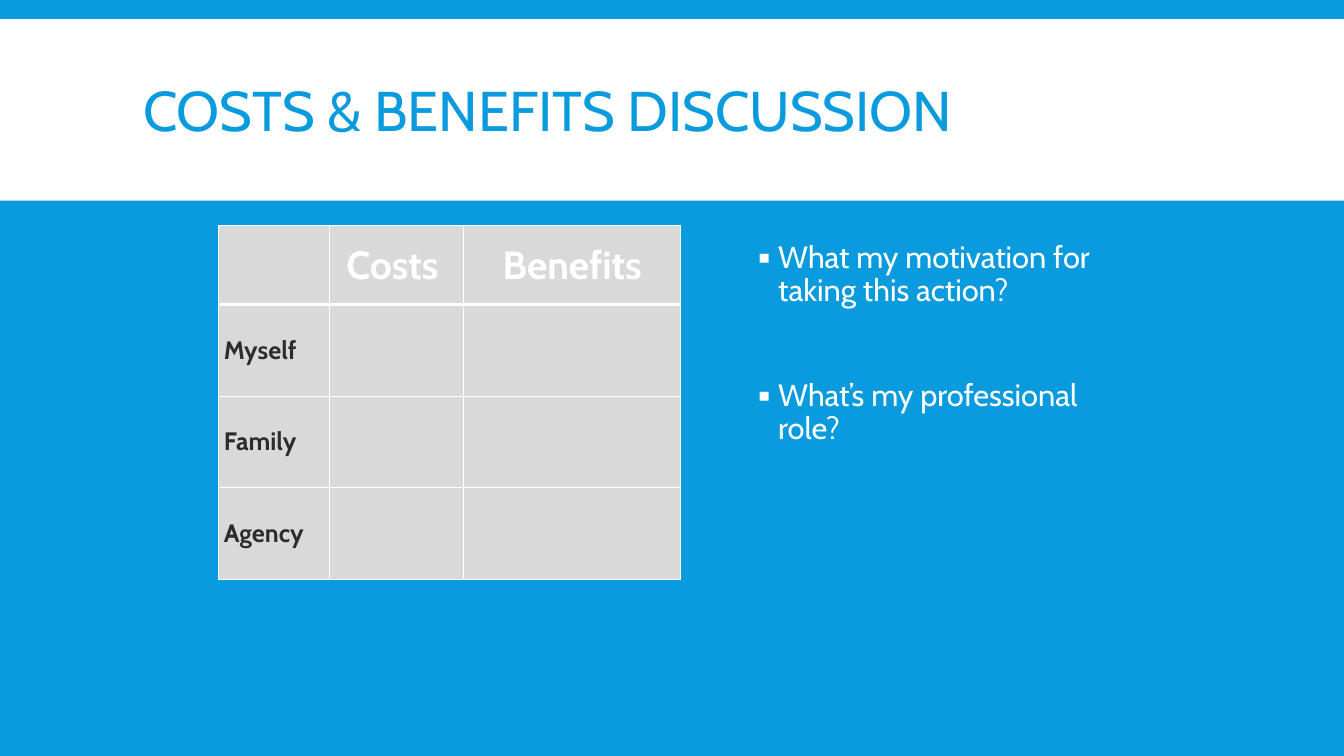
from lxml.etree import SubElement
from pptx import Presentation
from pptx.dml.color import RGBColor
from pptx.enum.shapes import MSO_SHAPE
from pptx.enum.text import MSO_ANCHOR, PP_ALIGN
from pptx.oxml.ns import qn
from pptx.util import Inches, Pt

FONT = "Cabin"
BLUE, WHITE, GREY, DARK = "099BDD", "FFFFFF", "D9D9D9", "2C2C2C"
COLUMN_WIDTHS = [1.1, 1.33, 2.15]
ROW_HEIGHTS = [0.78, 0.91, 0.91, 0.91]
TABLE_ROWS = [
    ["", "Costs ", "Benefits"],
    ["Myself", "", ""],
    ["Family", "", ""],
    ["Agency", "", ""],
]
QUESTIONS = ["What my motivation for taking this action?", "What’s my professional role?"]


def set_fill(fill, color):
    fill.solid()
    fill.fore_color.rgb = RGBColor.from_string(color)


def add_run(paragraph, text, size, color, bold=False):
    run = paragraph.add_run()
    run.text = text
    run.font.name = FONT
    run.font.size = Pt(size)
    run.font.bold = bold
    run.font.color.rgb = RGBColor.from_string(color)


def add_title_band(slide):
    band = slide.shapes.add_shape(
        MSO_SHAPE.RECTANGLE, Inches(0), Inches(0.19), Inches(13.33), Inches(1.8))
    band.shadow.inherit = False
    set_fill(band.fill, WHITE)
    band.line.fill.background()
    # Keep the band behind the title
    slide.shapes.title.element.addprevious(band.element)


def set_title(slide, text):
    title = slide.shapes.title
    title.left, title.top = Inches(1.32), Inches(0.31)
    title.width, title.height = Inches(10.7), Inches(1.65)
    title.text_frame.vertical_anchor = MSO_ANCHOR.MIDDLE
    paragraph = title.text_frame.paragraphs[0]
    paragraph.alignment = PP_ALIGN.LEFT
    paragraph.line_spacing = 0.85
    add_run(paragraph, text, 40, BLUE)


def set_borders(cell, top, bottom):
    properties = cell._tc.get_or_add_tcPr()
    for side, width in (("L", 1), ("R", 1), ("T", top), ("B", bottom)):
        line = SubElement(properties, qn(f"a:ln{side}"), w=str(Pt(width)))
        SubElement(SubElement(line, qn("a:solidFill")), qn("a:srgbClr"), val=WHITE)


def fill_cell(cell, text, row):
    set_borders(cell, top=3 if row == 1 else 1, bottom=3 if row == 0 else 1)
    set_fill(cell.fill, GREY)
    cell.vertical_anchor = MSO_ANCHOR.MIDDLE
    cell.margin_left = cell.margin_right = Inches(0.05)
    cell.margin_top = cell.margin_bottom = Inches(0.05)
    if not text:
        return
    paragraph = cell.text_frame.paragraphs[0]
    if row == 0:
        paragraph.alignment = PP_ALIGN.CENTER
        add_run(paragraph, text, 28, WHITE, bold=True)
    else:
        add_run(paragraph, text, 18, DARK, bold=True)


def add_costs_table(slide):
    table = slide.shapes.add_table(
        len(ROW_HEIGHTS), len(COLUMN_WIDTHS), Inches(2.17), Inches(2.24),
        Inches(sum(COLUMN_WIDTHS)), Inches(sum(ROW_HEIGHTS))).table
    table.horz_banding = False
    for column, width in zip(table.columns, COLUMN_WIDTHS):
        column.width = Inches(width)
    for row, height in enumerate(ROW_HEIGHTS):
        table.rows[row].height = Inches(height)
        for column, text in enumerate(TABLE_ROWS[row]):
            fill_cell(table.cell(row, column), text, row)


def set_bullet(paragraph):
    properties = paragraph._p.get_or_add_pPr()
    properties.set("marL", str(Inches(0.2)))
    properties.set("indent", str(-Inches(0.2)))
    SubElement(SubElement(properties, qn("a:buClr")), qn("a:srgbClr"), val=WHITE)
    SubElement(properties, qn("a:buFont"), typeface=FONT)
    SubElement(properties, qn("a:buChar"), char="▪")


def add_questions(slide):
    frame = slide.shapes.add_textbox(
        Inches(7.42), Inches(2.35), Inches(3.75), Inches(4.35)).text_frame
    frame.word_wrap = True
    for number, question in enumerate(QUESTIONS):
        paragraph = frame.add_paragraph() if number else frame.paragraphs[0]
        paragraph.line_spacing = 0.9
        paragraph.space_before = Pt(49 if number else 12)
        paragraph.space_after = Pt(2)
        set_bullet(paragraph)
        add_run(paragraph, question, 22, WHITE)


def main():
    presentation = Presentation()
    presentation.slide_width, presentation.slide_height = Inches(13.33), Inches(7.5)
    slide = presentation.slides.add_slide(presentation.slide_layouts[5])
    set_fill(slide.background.fill, BLUE)

    # Heading
    add_title_band(slide)
    set_title(slide, "COSTS & BENEFITS DISCUSSION")

    # Table on the left, questions on the right
    add_costs_table(slide)
    add_questions(slide)

    presentation.save("out.pptx")


if __name__ == "__main__":
    main()
